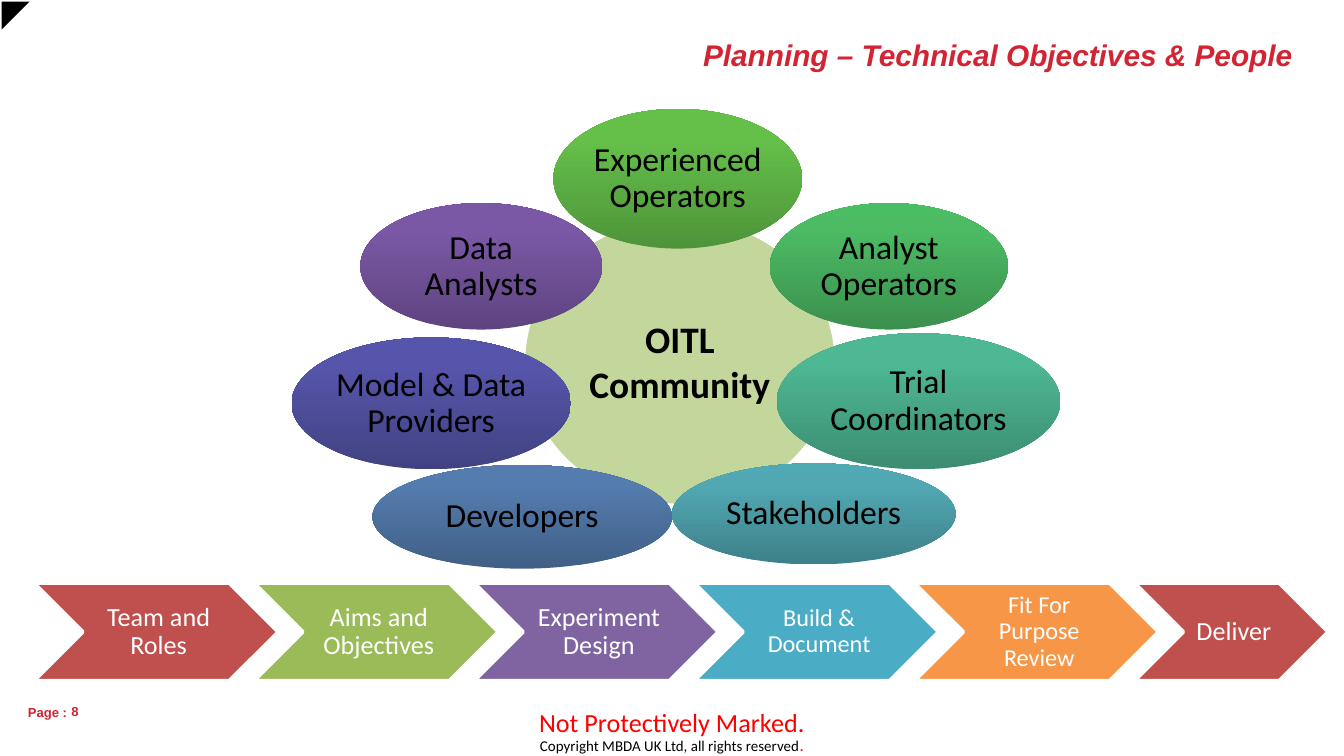
from copy import deepcopy

from pptx import Presentation
from pptx.dml.color import RGBColor
from pptx.enum.shapes import MSO_SHAPE
from pptx.enum.text import MSO_ANCHOR, PP_ALIGN
from pptx.oxml.ns import qn
from pptx.util import Cm, Pt

CHEVRON, ELLIPSE, CORNER = MSO_SHAPE.CHEVRON, MSO_SHAPE.OVAL, MSO_SHAPE.RIGHT_TRIANGLE
MIDDLE, TOP = MSO_ANCHOR.MIDDLE, MSO_ANCHOR.TOP
LEFT, CENTER, RIGHT = PP_ALIGN.LEFT, PP_ALIGN.CENTER, PP_ALIGN.RIGHT
RED = "D22432"
rgb = RGBColor.from_string


def write(shape, text, size, color, font="Calibri", bold=False, align=CENTER,
          anchor=MIDDLE, inset=None, wrap=True):
    """Fill the shape with one formatted paragraph and return it."""
    frame = shape.text_frame
    frame.word_wrap = wrap
    frame.vertical_anchor = anchor
    if inset is not None:
        frame.margin_left = frame.margin_right = Cm(inset)
        frame.margin_top = frame.margin_bottom = Cm(inset)
    paragraph = frame.paragraphs[0]
    paragraph.text = text
    paragraph.alignment = align
    paragraph.font.name = font
    paragraph.font.size = Pt(size)
    paragraph.font.bold = bold
    paragraph.font.color.rgb = rgb(color)
    return paragraph


def add_shape(kind, left, top, width, height, fill=None):
    shape = slide.shapes.add_shape(kind, Cm(left), Cm(top), Cm(width), Cm(height))
    shape.shadow.inherit = False
    shape.line.fill.background()
    if fill:
        shape.fill.solid()
        shape.fill.fore_color.rgb = rgb(fill)
    return shape


prs = Presentation()
prs.slide_width, prs.slide_height = Cm(25.4), Cm(14.29)
slide = prs.slides.add_slide(prs.slide_layouts[5])

# Footer
marking = slide.shapes.add_textbox(0, Cm(13.23), Cm(25.4), Cm(0.86))
write(marking, "Not Protectively Marked.", 14, "FF0000", anchor=TOP)

copyright_line = slide.shapes.add_textbox(Cm(0.1), Cm(13.77), Cm(25.2), Cm(0.64))
paragraph = write(copyright_line, "Copyright MBDA UK Ltd, all rights reserved", 8,
                  "000000", anchor=TOP)
full_stop = paragraph.add_run()
full_stop.text = "."
full_stop.font.size = Pt(9)
full_stop.font.color.rgb = rgb("FF0000")

page_label = slide.shapes.add_textbox(Cm(0.53), Cm(13.31), Cm(0.74), Cm(0.3))
write(page_label, "Page :", 7, RED, "Arial", True, LEFT, TOP, 0, False)
page_number = slide.shapes.add_textbox(Cm(1.35), Cm(13.21), Cm(0.51), Cm(0.48))
write(page_number, "8", 7, RED, "Arial", True, LEFT, MIDDLE, 0, False)

# Title
title = slide.shapes.title
title.left, title.top, title.width, title.height = Cm(3.56), Cm(0.23), Cm(21.13), Cm(1.6)
heading = write(title, "Planning – Technical Objectives & People", 16, RED, "Arial",
                True, RIGHT)
heading.font.italic = True

# Process steps
steps = [
    ("Team and Roles", "C0504D", 14, 4.62),
    ("Aims and Objectives", "9BBB59", 14, 4.62),
    ("Experiment Design", "8064A2", 14, 4.62),
    ("Build & Document", "4BACC6", 13, 4.62),
    ("Fit For Purpose Review", "F79646", 13, 4.62),
    ("Deliver", "C0504D", 14, 3.66),
]
for index, (step, color, size, width) in enumerate(steps):
    chevron = add_shape(CHEVRON, 0.64 + 4.16 * index, 11.02, width, 1.85, color)
    chevron.line.color.rgb = rgb("FFFFFF")
    chevron.line.width = Pt(2)
    write(chevron, step, size, "FFFFFF", inset=0.05).line_spacing = 0.9
    chevron.text_frame.margin_left = Cm(0.15)

# Community and its members
community = add_shape(ELLIPSE, 9.93, 4.14, 5.84, 5.38, "C3D69B")
write(community, "OITL Community", 20, "000000", bold=True)

members = [
    ("Analyst Operators", 14.55, 3.84, 4.5, 2.39, ("3B904D", "4CBB64", "4BBE64")),
    ("Trial Coordinators", 14.68, 6.3, 5.36, 2.57, ("3C8D72", "4EB894", "4CBB96")),
    ("Stakeholders", 12.7, 8.76, 5.36, 1.91, ("3E818A", "51A8B3", "4FAAB6")),
    ("Experienced Operators", 10.46, 2.06, 4.7, 2.64, ("4E9439", "65C04A", "65C348")),
    ("Data Analysts", 6.81, 3.84, 4.57, 2.39, ("5F4480", "7B58A6", "7C57A8")),
    ("Model & Data Providers", 5.51, 6.38, 5.28, 2.49, ("424283", "5655AB", "5554AD")),
    ("Developers", 7.04, 8.79, 5.66, 1.96, ("405F86", "547CAE", "527CB1")),
]
for member, left, top, width, height, colors in members:
    ellipse = add_shape(ELLIPSE, left, top, width, height)
    ellipse.fill.gradient()
    ellipse.fill.gradient_angle = 90
    # The default gradient has two stops; a third is needed
    stop_list = ellipse._element.spPr.find(qn("a:gradFill")).find(qn("a:gsLst"))
    stop_list.append(deepcopy(stop_list[-1]))
    for stop, position, color in zip(ellipse.fill.gradient_stops, (0, 0.8, 1), colors):
        stop.position = position
        stop.color.rgb = rgb(color)
    write(ellipse, member, 18, "000000", inset=0.03).line_spacing = 0.9

# Corner mark
corner = add_shape(CORNER, 0.03, 0.03, 0.53, 0.53, "000000")
corner.rotation = 90

prs.save("out.pptx")
